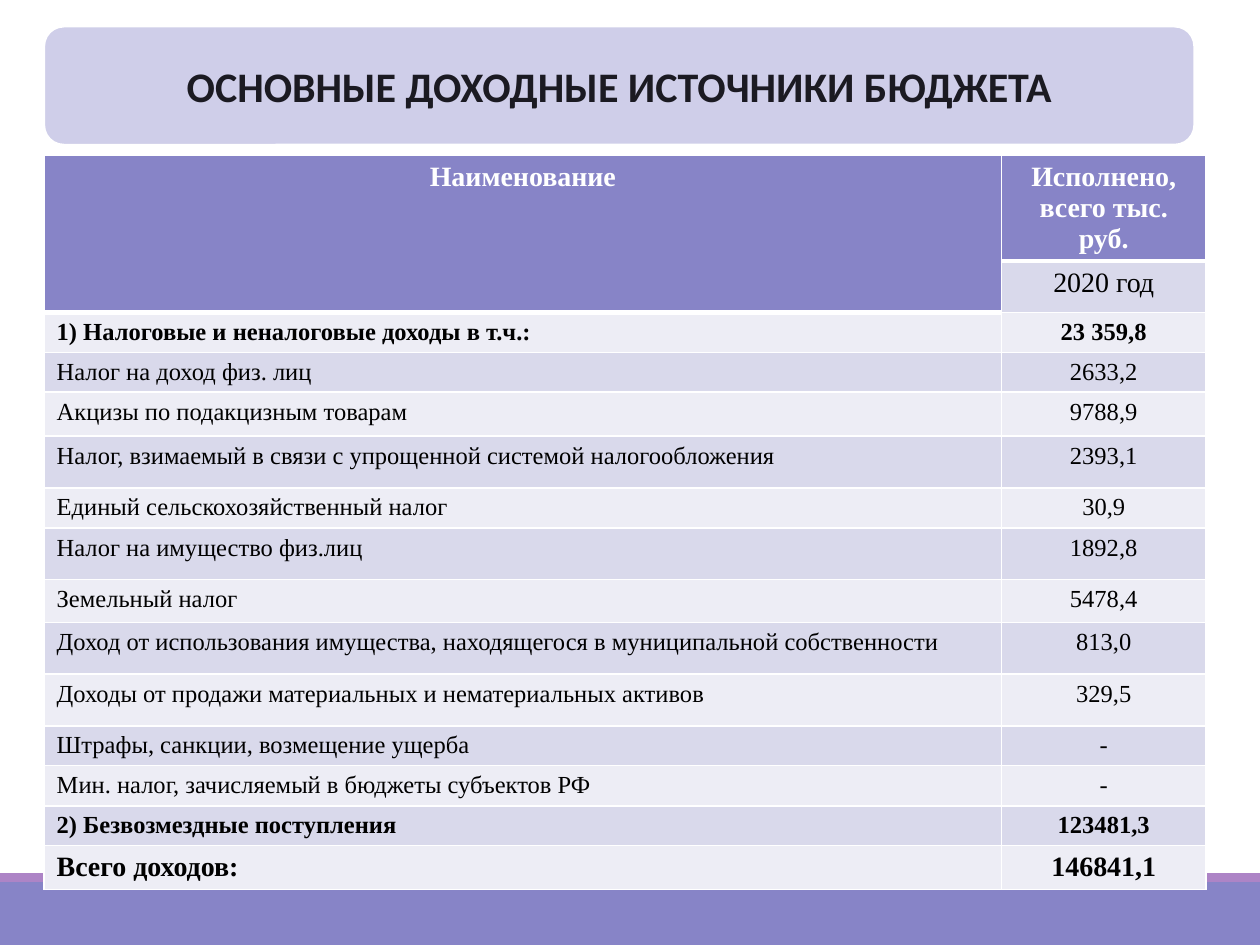
from lxml import etree
from pptx import Presentation
from pptx.dml.color import RGBColor
from pptx.enum.shapes import MSO_SHAPE as SHAPE
from pptx.enum.text import MSO_ANCHOR as ANCHOR, PP_ALIGN as ALIGN
from pptx.oxml.ns import qn
from pptx.util import Inches, Pt

COLORS = {
    "bar": "8784C7", "stripe": "AD84C6", "title_fill": "CFCEE9",
    "title": "1B1A22", "white": "FFFFFF", "black": "000000",
    "band_dark": "D9D9EB", "band_light": "EDEDF5",
}


def add_box(kind, left, top, width, height, color):
    sp = s.shapes.add_shape(kind, Inches(left), Inches(top), Inches(width), Inches(height))
    sp.shadow.inherit = False
    sp.fill.solid()
    sp.fill.fore_color.rgb = RGBColor.from_string(COLORS[color])
    sp.line.fill.background()
    return sp


def style_cell(cell, fill, bottom=1):
    cell.fill.solid()
    cell.fill.fore_color.rgb = RGBColor.from_string(COLORS[fill])
    tc_pr = cell._tc.get_or_add_tcPr()
    # Borders come before the fill in the cell properties
    for i, side in enumerate(("lnL", "lnR", "lnT", "lnB")):
        ln = etree.Element(qn("a:" + side), w=str(Pt(bottom if side == "lnB" else 1)))
        solid = etree.SubElement(ln, qn("a:solidFill"))
        etree.SubElement(solid, qn("a:srgbClr"), val=COLORS["white"])
        tc_pr.insert(i, ln)


prs = Presentation()
prs.slide_width, prs.slide_height = Inches(10), Inches(7.5)
s = prs.slides.add_slide(prs.slide_layouts[6])

# Footer bars
add_box(SHAPE.RECTANGLE, 0, 7, 10, 0.5, "bar")
add_box(SHAPE.RECTANGLE, 0, 6.93, 10, 0.07, "stripe")

# Title
sp = add_box(SHAPE.ROUNDED_RECTANGLE, 0.35, 0.21, 9.13, 0.94, "title_fill")
sp.line.color.rgb = RGBColor.from_string(COLORS["white"])
sp.line.width = Pt(1.25)
tf = sp.text_frame
tf.word_wrap = True
tf.vertical_anchor = ANCHOR.MIDDLE
p = tf.paragraphs[0]
p.text = "ОСНОВНЫЕ ДОХОДНЫЕ ИСТОЧНИКИ БЮДЖЕТА"
p.alignment = ALIGN.CENTER
p.font.name, p.font.size, p.font.bold = "Calibri", Pt(24), True
p.font.color.rgb = RGBColor.from_string(COLORS["title"])

# Revenue table: name, value, row height, text size, bold
rows = [
    ("Наименование", "Исполнено, всего тыс. руб.", 0.83, 16, True),
    ("", "2020 год", 0.41, 16, False),
    ("1) Налоговые и неналоговые доходы в т.ч.:", "23 359,8", 0.31, 14, True),
    ("Налог на доход физ. лиц", "2633,2", 0.31, 14, False),
    ("Акцизы по подакцизным товарам", "9788,9", 0.35, 14, False),
    ("Налог, взимаемый в связи с упрощенной системой налогообложения", "2393,1", 0.41, 14, False),
    ("Единый сельскохозяйственный налог", "30,9", 0.32, 14, False),
    ("Налог на имущество физ.лиц", "1892,8", 0.41, 14, False),
    ("Земельный налог", "5478,4", 0.34, 14, False),
    ("Доход от использования имущества, находящегося в муниципальной собственности",
     "813,0", 0.41, 14, False),
    ("Доходы от продажи материальных и нематериальных активов", "329,5", 0.41, 14, False),
    ("Штрафы, санкции, возмещение ущерба", "-", 0.31, 14, False),
    ("Мин. налог, зачисляемый в бюджеты субъектов РФ", "-", 0.32, 14, False),
    ("2) Безвозмездные поступления", "123481,3", 0.31, 14, True),
    ("Всего доходов:", "146841,1", 0.34, 16, True),
]
height = sum(row[2] for row in rows)
table = s.shapes.add_table(len(rows), 2, Inches(0.35), Inches(1.23),
                           Inches(9.22), Inches(height)).table
table.columns[0].width, table.columns[1].width = Inches(7.6), Inches(1.62)
table.cell(0, 0).merge(table.cell(1, 0))

for i, (name, value, row_height, size, bold) in enumerate(rows):
    table.rows[i].height = Inches(row_height)
    for j, text in enumerate((name, value)):
        cell = table.cell(i, j)
        header = i == 0 or (i == 1 and j == 0)
        band = "band_dark" if i % 2 else "band_light"
        style_cell(cell, "bar" if header else band, 3 if header else 1)
        if cell.is_spanned:
            continue
        p = cell.text_frame.paragraphs[0]
        p.text = text
        p.alignment = ALIGN.CENTER if header or j == 1 else ALIGN.LEFT
        p.font.name, p.font.size, p.font.bold = "Times New Roman", Pt(size), bold
        p.font.color.rgb = RGBColor.from_string(COLORS["white" if header else "black"])

prs.save("out.pptx")
